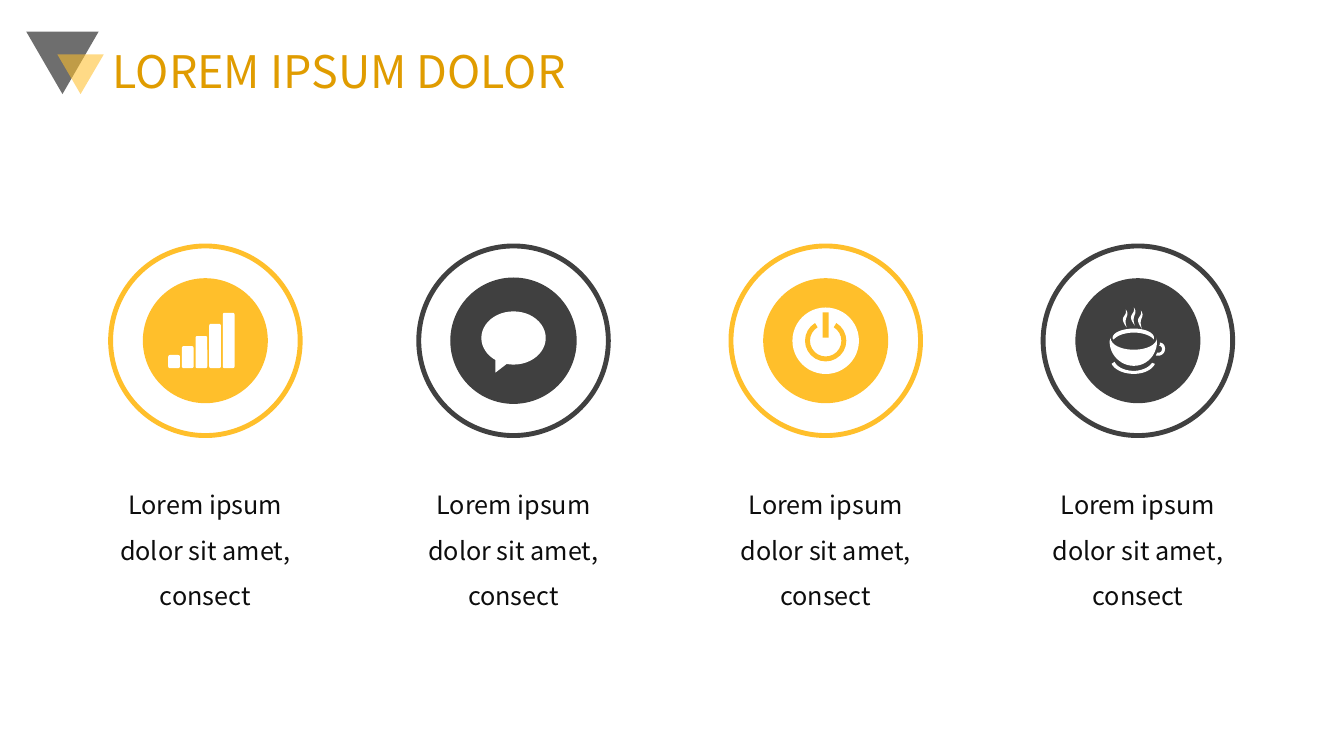
from lxml.etree import SubElement
from pptx import Presentation
from pptx.dml.color import RGBColor
from pptx.enum.shapes import MSO_SHAPE
from pptx.enum.text import MSO_ANCHOR, PP_ALIGN
from pptx.oxml.ns import qn
from pptx.util import Pt

YELLOW = RGBColor(0xFF, 0xBF, 0x2B)
GREY = RGBColor(0x40, 0x40, 0x40)
BLACK = RGBColor(0, 0, 0)
WHITE = RGBColor(0xFF, 0xFF, 0xFF)
INK = RGBColor(0x0D, 0x0D, 0x0D)
TITLE = RGBColor(0xE0, 0x9C, 0x00)
FONT = "Noto Sans CJK JP"
CAPTION = "Lorem ipsum dolor sit amet, consect"
CENTRE_Y = 243.4
CUP_UNIT = 0.72
CURVE_STEPS = 12

CUP_PARTS = [
    [(5, 54), (7, 59, 15, 63, 24, 63), (32, 63, 40, 59, 42, 55), (45, 56),
     (42, 62, 34, 66, 24, 66), (14, 66, 5, 62, 2, 56)],
    [(50, 35), (53, 35, 55, 38, 55, 41), (55, 45, 52, 48, 48, 48), (46, 48),
     (46, 47, 47, 46, 47, 45), (48, 45), (50, 45, 52, 44, 52, 41),
     (52, 40, 51, 38, 49, 38), (50, 37, 50, 36, 50, 35)],
    [(47, 30), (47, 31, 47, 33, 47, 34), (47, 47, 37, 58, 24, 58),
     (11, 58, 0, 47, 0, 34), (0, 33, 1, 31, 1, 30),
     (1, 37, 11, 42, 24, 42), (37, 42, 47, 37, 47, 30)],
    [(24, 21), (35, 21, 44, 25, 44, 30), (44, 31, 44, 31, 44, 32),
     (41, 28, 33, 25, 24, 25), (15, 25, 7, 28, 4, 32),
     (3, 31, 3, 31, 3, 30), (3, 25, 13, 21, 24, 21)],
]
STEAM = [(0, 0), (5, 7, -3, 7, 1, 18), (-8, 6, 2, 8, 0, 0)]
STEAM_TOPS = [(16, 2), (24, 0), (31, 3)]


def paint(sp, fill=None, line=None, width=1, alpha=None):
    sp.shadow.inherit = False
    if fill is None:
        sp.fill.background()
    else:
        sp.fill.solid()
        sp.fill.fore_color.rgb = fill
    if line is None:
        sp.line.fill.background()
    else:
        sp.line.color.rgb = line
        sp.line.width = Pt(width)
    if alpha is not None:
        color = sp.fill._xPr.find(qn("a:solidFill"))[0]
        SubElement(color, qn("a:alpha")).set("val", str(alpha * 1000))


def add_preset(s, kind, x, y, w, h, **style):
    sp = s.shapes.add_shape(kind, Pt(x), Pt(y), Pt(w), Pt(h))
    paint(sp, **style)
    return sp


def add_centred(s, kind, cx, cy, w, h, **style):
    return add_preset(s, kind, cx - w / 2, cy - h / 2, w, h, **style)


def add_text(s, text, x, y, w, h, size, color, spacing, align, anchor):
    tf = s.shapes.add_textbox(Pt(x), Pt(y), Pt(w), Pt(h)).text_frame
    tf.word_wrap = True
    tf.vertical_anchor = anchor
    p = tf.paragraphs[0]
    p.text = text
    p.alignment = align
    p.line_spacing = spacing
    p.font.size = Pt(size)
    p.font.name = FONT
    p.font.color.rgb = color


def trace(part):
    points = [part[0]]
    for step in part[1:]:
        if len(step) == 2:
            points.append(step)
            continue
        nodes = [points[-1], step[:2], step[2:4], step[4:]]
        for i in range(1, CURVE_STEPS + 1):
            t = i / CURVE_STEPS
            weights = ((1 - t) ** 3, 3 * t * (1 - t) ** 2, 3 * t * t * (1 - t), t ** 3)
            points.append(tuple(sum(k * n[axis] for k, n in zip(weights, nodes))
                                for axis in (0, 1)))
    return points


def draw_cup(s, cx, color):
    left, top = cx - 20.2, CENTRE_Y - 23.8
    outlines = [trace(part) for part in CUP_PARTS]
    outlines += [[(x + dx, y + dy) for x, y in trace(STEAM)] for dx, dy in STEAM_TOPS]
    builder = None
    for outline in outlines:
        points = [(Pt(left + x * CUP_UNIT), Pt(top + y * CUP_UNIT)) for x, y in outline]
        if builder is None:
            builder = s.shapes.build_freeform(*points[0])
        else:
            builder.move_to(*points[0])
        builder.add_line_segments(points[1:], close=True)
    paint(builder.convert_to_shape(), fill=WHITE)


def draw_bars(s, cx, color):
    for i, h in enumerate([9.4, 15.8, 23, 31.7, 39.6]):
        bar = add_preset(s, MSO_SHAPE.ROUNDED_RECTANGLE, cx - 26.5 + 9.75 * i,
                         CENTRE_Y + 19.6 - h, 8.4, h, fill=WHITE)
        bar.adjustments[0] = 0.15


def draw_bubble(s, cx, color):
    bubble = add_centred(s, MSO_SHAPE.OVAL_CALLOUT, cx, CENTRE_Y - 2, 46, 38, fill=WHITE)
    bubble.adjustments[0] = -0.28
    bubble.adjustments[1] = 0.65


def draw_power(s, cx, color):
    add_centred(s, MSO_SHAPE.OVAL, cx, CENTRE_Y, 47.5, 47.5, fill=WHITE)
    arc = add_centred(s, MSO_SHAPE.BLOCK_ARC, cx, CENTRE_Y, 29.5, 29.5, fill=color)
    for i, value in enumerate([301 * 0.6, 239 * 0.6, 0.12]):
        arc.adjustments[i] = value
    add_preset(s, MSO_SHAPE.RECTANGLE, cx - 2.1, CENTRE_Y - 20.2, 4.2, 18, fill=color)


def add_feature(s, cx, color, draw_icon, rim):
    add_centred(s, MSO_SHAPE.OVAL, cx, CENTRE_Y, 135.4, 135.4, line=color, width=3.5)
    add_centred(s, MSO_SHAPE.OVAL, cx, CENTRE_Y, 89.3, 89.3, fill=color, line=rim)
    draw_icon(s, cx, color)
    add_text(s, CAPTION, cx - 81.5, 335.5, 163, 106.6, 18, INK, 1.5,
             PP_ALIGN.CENTER, MSO_ANCHOR.TOP)


def main():
    prs = Presentation()
    prs.slide_width, prs.slide_height = Pt(960), Pt(540)
    s = prs.slides.add_slide(prs.slide_layouts[6])
    for x, y, w, h, color in [(18.7, 22.5, 51.8, 44.7, BLACK),
                              (41, 38.9, 33.1, 28.3, YELLOW)]:
        sp = add_preset(s, MSO_SHAPE.ISOSCELES_TRIANGLE, x, y, w, h, fill=color, alpha=57)
        sp.rotation = 180
    add_feature(s, 146.7, YELLOW, draw_bars, None)
    add_feature(s, 366.8, GREY, draw_bubble, GREY)
    add_feature(s, 589.8, YELLOW, draw_power, None)
    add_feature(s, 812.8, GREY, draw_cup, None)
    add_text(s, "LOREM IPSUM DOLOR", 73.5, 22.3, 828, 61.2, 32, TITLE, 0.9,
             PP_ALIGN.LEFT, MSO_ANCHOR.MIDDLE)
    prs.save("out.pptx")


if __name__ == "__main__":
    main()
